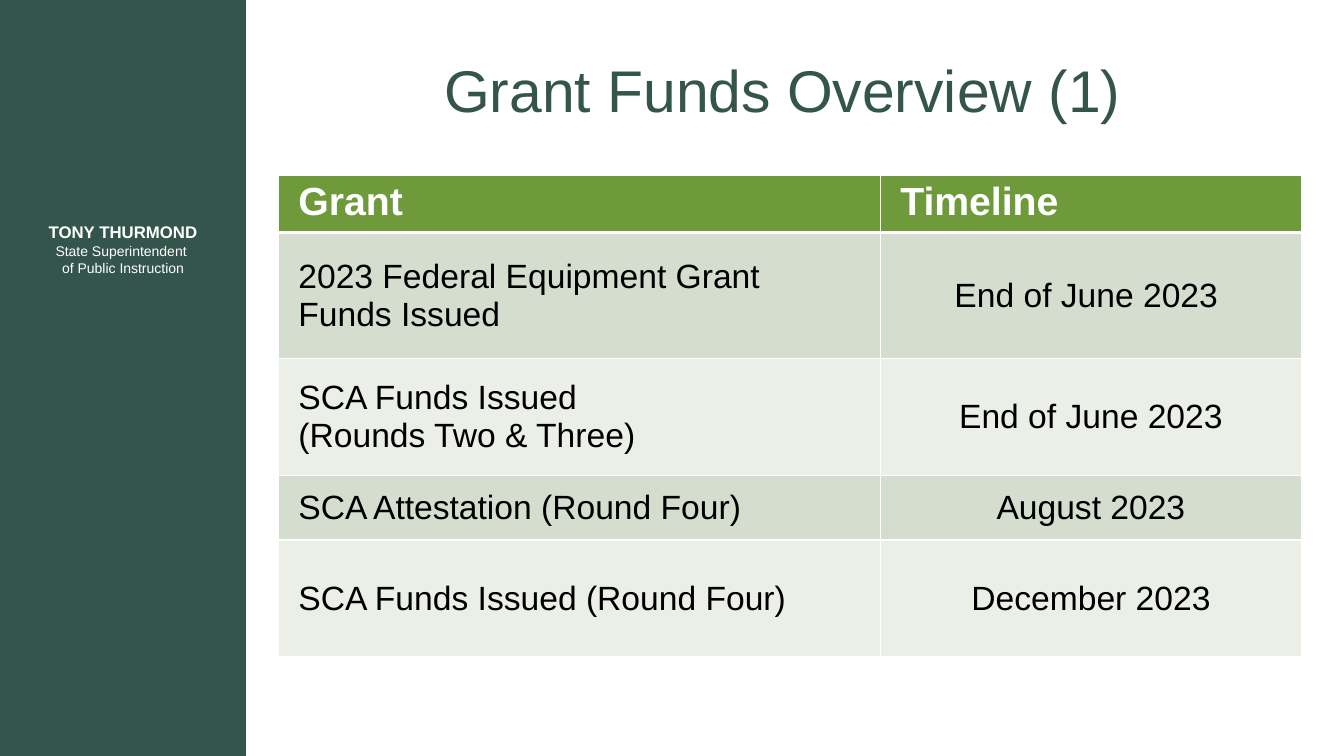
from lxml.etree import SubElement
from pptx import Presentation
from pptx.dml.color import RGBColor
from pptx.enum.shapes import MSO_SHAPE as SHAPE
from pptx.enum.text import MSO_ANCHOR as ANCHOR, PP_ALIGN as ALIGN
from pptx.oxml.ns import qn
from pptx.util import Inches, Pt

FONT = "Arial"
GREEN, HEADER, WHITE, BLACK = "34554C", "6E9A3B", "FFFFFF", "000000"
BANDS = ("D5DECE", "EBEFE8")
SIDEBAR, CONTENT = 2.44, 2.76
COLUMNS = (5.97, 4.18)
ROWS = (0.56, 1.25, 1.16, 0.64, 1.16)
GRANTS = (
    ("Grant", "Timeline"),
    ("2023 Federal Equipment Grant Funds Issued", "End of June 2023 "),
    ("SCA Funds Issued \n(Rounds Two & Three)", "End of June 2023"),
    ("SCA Attestation (Round Four)", "August 2023"),
    ("SCA Funds Issued (Round Four)", "December 2023"),
)


def rgb(value):
    return RGBColor.from_string(value)


def box(*lengths):
    return [Inches(n) for n in lengths]


def style(font, size, color, bold=False):
    font.name, font.size, font.bold = FONT, Pt(size), bold
    font.color.rgb = rgb(color)


def add_title(s, text):
    sp = s.shapes.title
    sp.left, sp.top, sp.width, sp.height = box(CONTENT, 0.26, 10, 1.25)
    tf = sp.text_frame
    tf.text, tf.vertical_anchor = text, ANCHOR.MIDDLE
    p = tf.paragraphs[0]
    p.alignment = ALIGN.CENTER
    style(p.font, 42, GREEN)


def add_sidebar(s, height):
    sp = s.shapes.add_shape(SHAPE.RECTANGLE, 0, 0, Inches(SIDEBAR), height)
    sp.shadow.inherit = False
    sp.fill.solid()
    sp.fill.fore_color.rgb = rgb(GREEN)
    sp.line.fill.background()


def add_official(s, name, *role):
    width = 1.86
    left = (SIDEBAR - width) / 2
    tf = s.shapes.add_textbox(*box(left, 2.09, width, 0.76)).text_frame
    tf.word_wrap, tf.vertical_anchor = True, ANCHOR.MIDDLE
    p = tf.paragraphs[0]
    p.alignment = ALIGN.CENTER
    r = p.add_run()
    r.text = name
    style(r.font, 12, WHITE, True)
    for line in role:
        p.add_line_break()
        r = p.add_run()
        r.text = line
        style(r.font, 10, WHITE)


def add_borders(cell, bottom):
    pr = cell._tc.get_or_add_tcPr()
    widths = {"a:lnL": 1, "a:lnR": 1, "a:lnT": 1, "a:lnB": bottom}
    for tag, width in widths.items():
        ln = SubElement(pr, qn(tag), w=str(Pt(width)))
        fill = SubElement(ln, qn("a:solidFill"))
        SubElement(fill, qn("a:srgbClr"), val=WHITE)


def format_cell(cell, text, row, col):
    header = row == 0
    add_borders(cell, 3 if header else 1)
    cell.fill.solid()
    cell.fill.fore_color.rgb = rgb(HEADER if header else BANDS[(row - 1) % 2])
    cell.margin_left = cell.margin_right = Inches(0.2)
    cell.margin_top = cell.margin_bottom = Inches(0.05)
    cell.vertical_anchor = ANCHOR.TOP if header else ANCHOR.MIDDLE
    cell.text = text
    for p in cell.text_frame.paragraphs:
        p.alignment = ALIGN.CENTER if col and not header else ALIGN.LEFT
        style(p.font, 28 if header else 24, WHITE if header else BLACK, header)
        for r in p.runs:
            style(r.font, 28 if header else 24, WHITE if header else BLACK, header)


def add_grants(s):
    place = box(CONTENT, 1.74, sum(COLUMNS), sum(ROWS))
    table = s.shapes.add_table(len(ROWS), len(COLUMNS), *place).table
    for column, width in zip(table.columns, COLUMNS):
        column.width = Inches(width)
    for i, (row, height) in enumerate(zip(table.rows, ROWS)):
        row.height = Inches(height)
        for j, text in enumerate(GRANTS[i]):
            format_cell(table.cell(i, j), text, i, j)


def main():
    prs = Presentation()
    prs.slide_width, prs.slide_height = box(13.33, 7.5)
    s = prs.slides.add_slide(prs.slide_layouts[5])
    add_sidebar(s, prs.slide_height)
    add_official(s, "TONY THURMOND", "State Superintendent ", "of Public Instruction")
    add_title(s, "Grant Funds Overview (1)")
    add_grants(s)
    prs.save("out.pptx")


if __name__ == "__main__":
    main()
